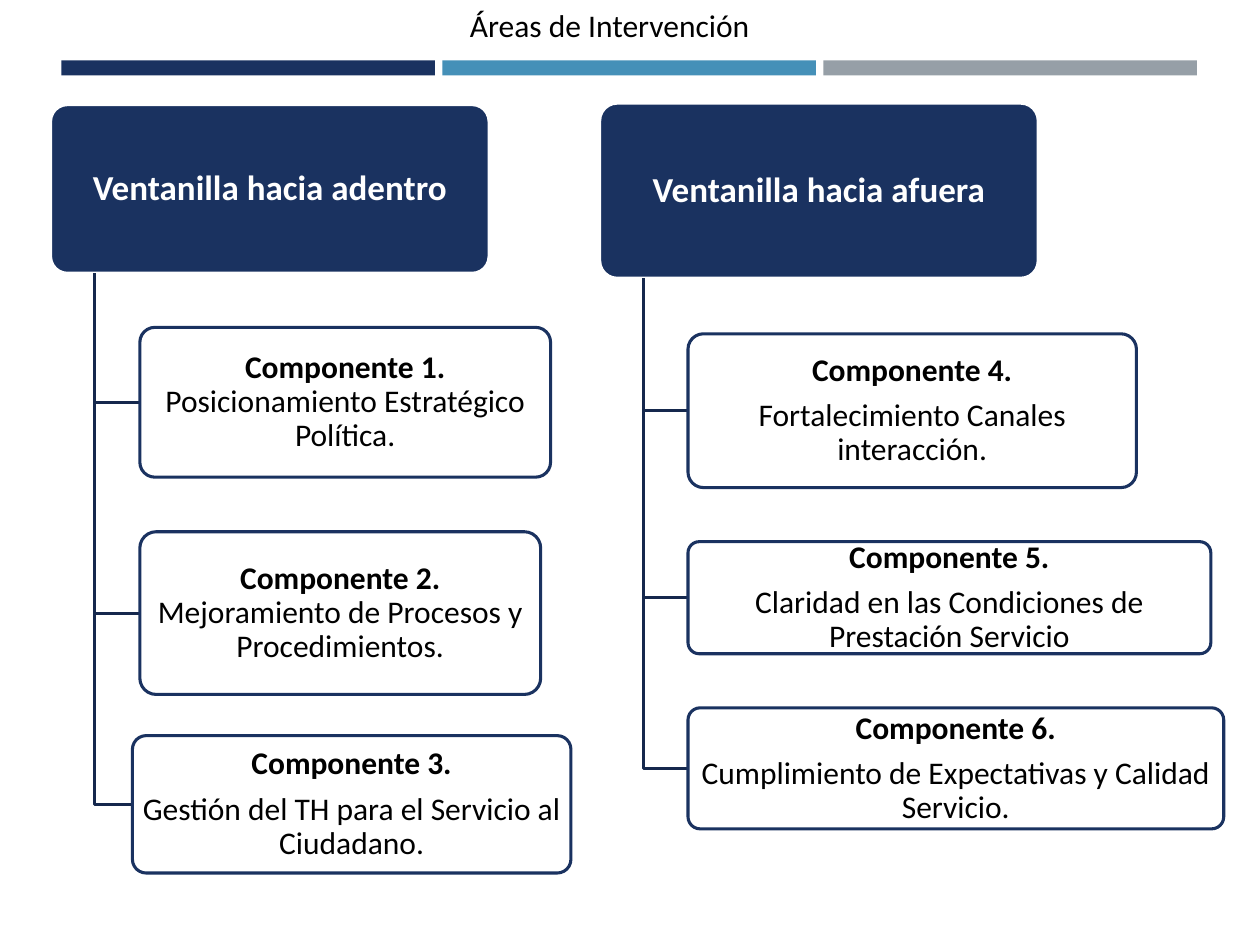
import dataclasses

import lxml.etree
import pptx
import pptx.dml.color
import pptx.enum.shapes
import pptx.enum.text
import pptx.oxml.ns
import pptx.util
from pptx.util import Cm


@dataclasses.dataclass(frozen=True)
class Theme:
    navy: str = "1A3260"
    blue: str = "4590B8"
    grey: str = "969FA7"
    branch: str = "15284D"
    white: str = "FFFFFF"
    black: str = "000000"
    font: str = "Calibri"
    heading_size: int = 20
    body_size: int = 18
    line_width: float = 1.75


THEME = Theme()
SHAPES = pptx.enum.shapes.MSO_SHAPE
ALIGN = pptx.enum.text.PP_ALIGN
ANCHOR = pptx.enum.text.MSO_ANCHOR

# Each column: heading, its box, then components as (paragraphs of (text, bold), box).
# Boxes are left, top, width, height in centimetres.
COLUMNS = [
    ("Ventanilla hacia adentro", (1.02, 2.11, 8.84, 3.4), [
        ([[("Componente 1. ", True), ("Posicionamiento Estratégico Política.", False)]],
         (2.82, 6.6, 8.28, 3.02)),
        ([[("Componente 2. ", True), ("Mejoramiento de Procesos y Procedimientos.", False)]],
         (2.82, 10.72, 8.08, 3.28)),
        ([[("Componente 3.", True)],
          [("Gestión del TH para el Servicio al Ciudadano.", False)]],
         (2.67, 14.83, 8.84, 2.77)),
    ]),
    ("Ventanilla hacia afuera", (12.09, 2.08, 8.84, 3.53), [
        ([[("Componente 4.", True)], [("Fortalecimiento Canales interacción.", False)]],
         (13.87, 6.73, 9.04, 3.1)),
        ([[("Componente 5.", True)],
          [("Claridad en las Condiciones de Prestación Servicio", False)]],
         (13.87, 10.92, 10.54, 2.26)),
        ([[("Componente 6.", True)],
          [("Cumplimiento de Expectativas y Calidad Servicio.", False)]],
         (13.87, 14.27, 10.8, 2.44)),
    ]),
]


def rgb(value):
    return pptx.dml.color.RGBColor.from_string(value)


def add_span(para, text, size, color, bold=False):
    span = para.add_run()
    span.text = text
    span.font.name = THEME.font
    span.font.size = pptx.util.Pt(size)
    span.font.bold = bold
    span.font.color.rgb = rgb(color)


def set_line(shape, color):
    shape.line.color.rgb = rgb(color)
    shape.line.width = pptx.util.Pt(THEME.line_width)


def add_filled(slide, kind, box, fill):
    shape = slide.shapes.add_shape(kind, *map(Cm, box))
    shape.shadow.inherit = False
    shape.fill.solid()
    shape.fill.fore_color.rgb = rgb(fill)
    shape.line.fill.background()
    return shape


def set_opacity(shape, percent):
    color = shape._element.spPr.find(
        pptx.oxml.ns.qn("a:solidFill") + "/" + pptx.oxml.ns.qn("a:srgbClr"))
    alpha = lxml.etree.SubElement(color, pptx.oxml.ns.qn("a:alpha"))
    alpha.set("val", str(percent * 1000))


def add_card(slide, box, paragraphs, fill, line, color, size):
    card = add_filled(slide, SHAPES.ROUNDED_RECTANGLE, box, fill)
    card.adjustments[0] = 0.1
    set_line(card, line)
    frame = card.text_frame
    frame.word_wrap = True
    frame.vertical_anchor = ANCHOR.MIDDLE
    frame.margin_left = frame.margin_right = Cm(0.1)
    frame.margin_top = frame.margin_bottom = Cm(0.08)
    for index, spans in enumerate(paragraphs):
        para = frame.add_paragraph() if index else frame.paragraphs[0]
        para.alignment = ALIGN.CENTER
        para.line_spacing = 0.9
        para.space_after = pptx.util.Pt(0.35 * size)
        for text, bold in spans:
            add_span(para, text, size, color, bold)
    return card


def add_branch(slide, head, box):
    """Elbow from below the heading to the middle of a component's left side."""
    trunk = Cm(head[0] + head[2] / 10)
    start = Cm(head[1] + head[3])
    middle = Cm(box[1] + box[3] / 2)
    builder = slide.shapes.build_freeform(trunk, start)
    builder.add_line_segments([(trunk, middle), (Cm(box[0]), middle)], close=False)
    branch = builder.convert_to_shape()
    branch.shadow.inherit = False
    branch.fill.background()
    set_line(branch, THEME.branch)


def add_column(slide, heading, head, components):
    add_card(slide, head, [[(heading, True)]], THEME.navy, THEME.white,
             THEME.white, THEME.heading_size)
    for paragraphs, box in components:
        add_branch(slide, head, box)
        card = add_card(slide, box, paragraphs, THEME.white, THEME.navy,
                        THEME.black, THEME.body_size)
        set_opacity(card, 90)


def add_title(slide, text):
    title = slide.shapes.title
    title.left, title.top, title.width, title.height = map(Cm, (9.22, 0, 7.29, 1.03))
    frame = title.text_frame
    frame.word_wrap = True
    frame.auto_size = pptx.enum.text.MSO_AUTO_SIZE.NONE
    frame.vertical_anchor = ANCHOR.TOP
    para = frame.paragraphs[0]
    para.alignment = ALIGN.LEFT
    add_span(para, text, THEME.body_size, THEME.black)


def add_bars(slide):
    width, gap = 7.53, 0.15
    for index, color in enumerate((THEME.navy, THEME.blue, THEME.grey)):
        left = 1.24 + index * (width + gap)
        add_filled(slide, SHAPES.RECTANGLE, (left, 1.22, width, 0.3), color)


def main():
    deck = pptx.Presentation()
    deck.slide_width, deck.slide_height = Cm(25.4), Cm(19.05)
    slide = deck.slides.add_slide(deck.slide_layouts[5])

    # Title and the three-colour rule below it
    add_title(slide, "Áreas de Intervención")
    add_bars(slide)

    # Two hierarchies of components
    for heading, head, components in COLUMNS:
        add_column(slide, heading, head, components)

    deck.save("out.pptx")


if __name__ == "__main__":
    main()
